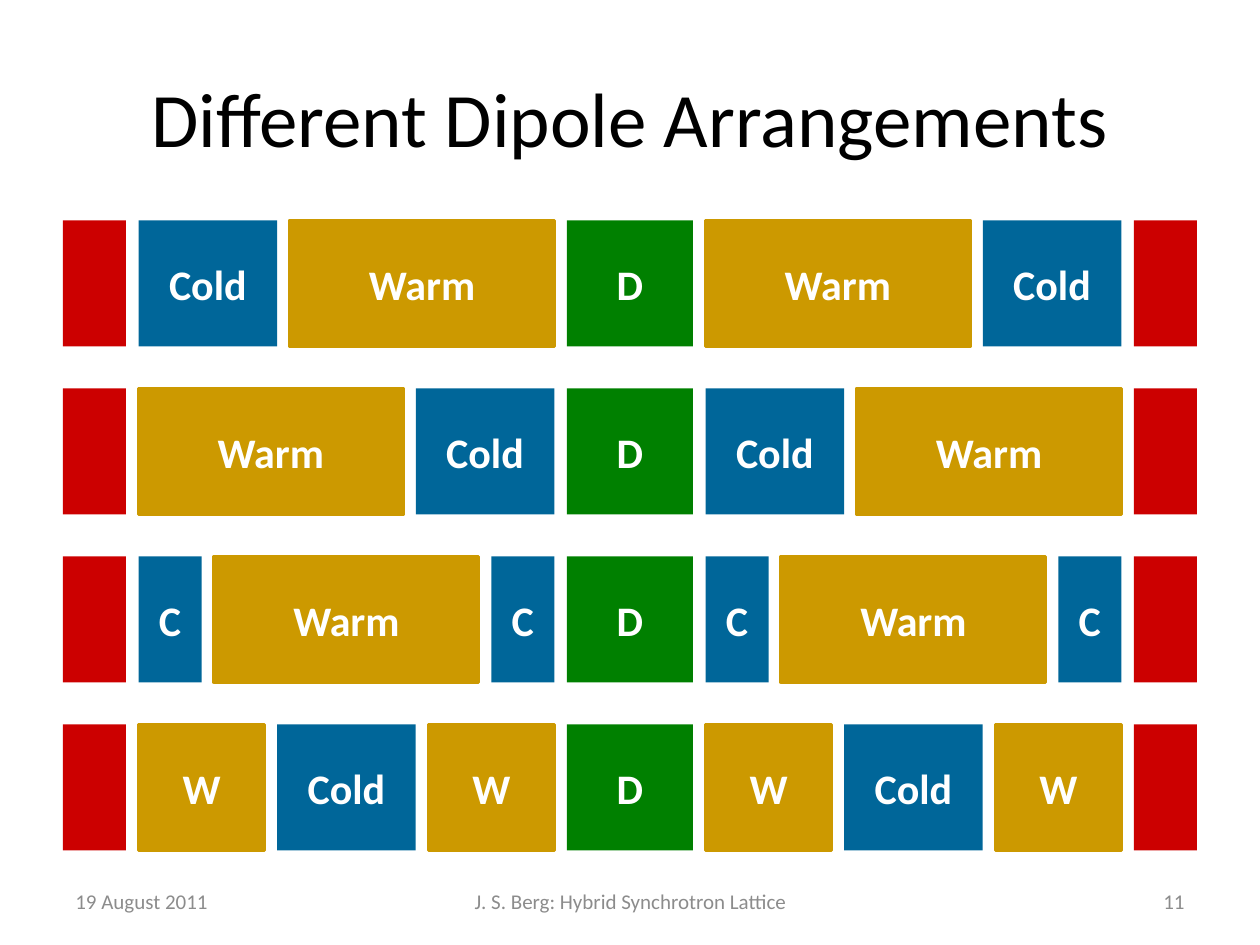
"""Builds a slide comparing dipole arrangements in a hybrid synchrotron cell."""
from pptx import Presentation
from pptx.dml.color import RGBColor
from pptx.enum.shapes import MSO_SHAPE
from pptx.enum.text import MSO_ANCHOR, PP_ALIGN
from pptx.util import Inches, Pt

COLORS = {"quad": "CC0000", "cold": "006699", "warm": "CC9900", "center": "008000",
          "title": "000000", "label": "FFFFFF", "footer": "8C8C8C"}
MAGNETS = {
    "end": ("", "quad", 5),
    "Cold": ("Cold", "cold", 11),
    "C": ("C", "cold", 5),
    "Warm": ("Warm", "warm", 21),
    "W": ("W", "warm", 10),
    "D": ("D", "center", 10),
}
HALF_CELLS = [["Cold", "Warm"], ["Warm", "Cold"], ["C", "Warm", "C"], ["W", "Cold", "W"]]
FOOTERS = [
    ("19 August 2011", 5, 23.3, PP_ALIGN.LEFT),
    ("J. S. Berg: Hybrid Synchrotron Lattice", 34.2, 31.7, PP_ALIGN.CENTER),
    ("11", 71.7, 23.3, PP_ALIGN.RIGHT),
]


class LatticeSlide:
    """Holds the style and the page; lengths are grid units of a tenth of an inch."""

    unit = Inches(0.1)
    font = "Calibri"
    margin = 5
    gap = 1
    first_row = 17.5
    row_pitch = 40 / 3
    magnet_height = 10

    def __init__(self, deck):
        """Add a page with only a title."""
        self.page = deck.slides.add_slide(deck.slide_layouts[5])

    def area(self, *lengths):
        """Turn grid units into slide lengths."""
        return [round(length * self.unit) for length in lengths]

    def color(self, name):
        """Look up a named color."""
        return RGBColor.from_string(COLORS[name])

    def set_text(self, shape, text, size, color, align=PP_ALIGN.CENTER, bold=False):
        """Put one vertically centered line of text in a shape."""
        frame = shape.text_frame
        frame.word_wrap = True
        frame.vertical_anchor = MSO_ANCHOR.MIDDLE
        para = frame.paragraphs[0]
        para.text = text
        para.alignment = align
        para.font.name = self.font
        para.font.size = Pt(size)
        para.font.bold = bold
        para.font.color.rgb = self.color(color)

    def title(self, text):
        """Place and fill the title placeholder."""
        title = self.page.shapes.title
        title.left, title.top, title.width, title.height = self.area(5, 3, 90, 12.5)
        self.set_text(title, text, 44, "title")

    def magnet(self, kind, left, top):
        """Draw one magnet and return its width."""
        label, color, width = MAGNETS[kind]
        box = self.page.shapes.add_shape(
            MSO_SHAPE.RECTANGLE, *self.area(left, top, width, self.magnet_height))
        box.shadow.inherit = False
        box.fill.solid()
        box.fill.fore_color.rgb = self.color(color)
        if color == "warm":
            box.line.color.rgb = self.color(color)
            box.line.width = Pt(2)
        else:
            box.line.fill.background()
        if label:
            self.set_text(box, label, 24, "label", bold=True)
        return width

    def cell(self, row, half):
        """Draw a cell that is symmetric about its central magnet."""
        left = self.margin
        for kind in ["end", *half, "D", *reversed(half), "end"]:
            left += self.magnet(kind, left, self.first_row + row * self.row_pitch) + self.gap

    def footer(self, text, left, width, align):
        """Add one footer text."""
        box = self.page.shapes.add_textbox(*self.area(left, 69.5, width, 4))
        self.set_text(box, text, 12, "footer", align)


def main():
    """Build and save the deck."""
    deck = Presentation()
    deck.slide_width, deck.slide_height = Inches(10), Inches(7.5)
    slide = LatticeSlide(deck)
    slide.title("Different Dipole Arrangements")
    for row, half in enumerate(HALF_CELLS):
        slide.cell(row, half)
    for footer in FOOTERS:
        slide.footer(*footer)
    deck.save("out.pptx")


if __name__ == "__main__":
    main()
